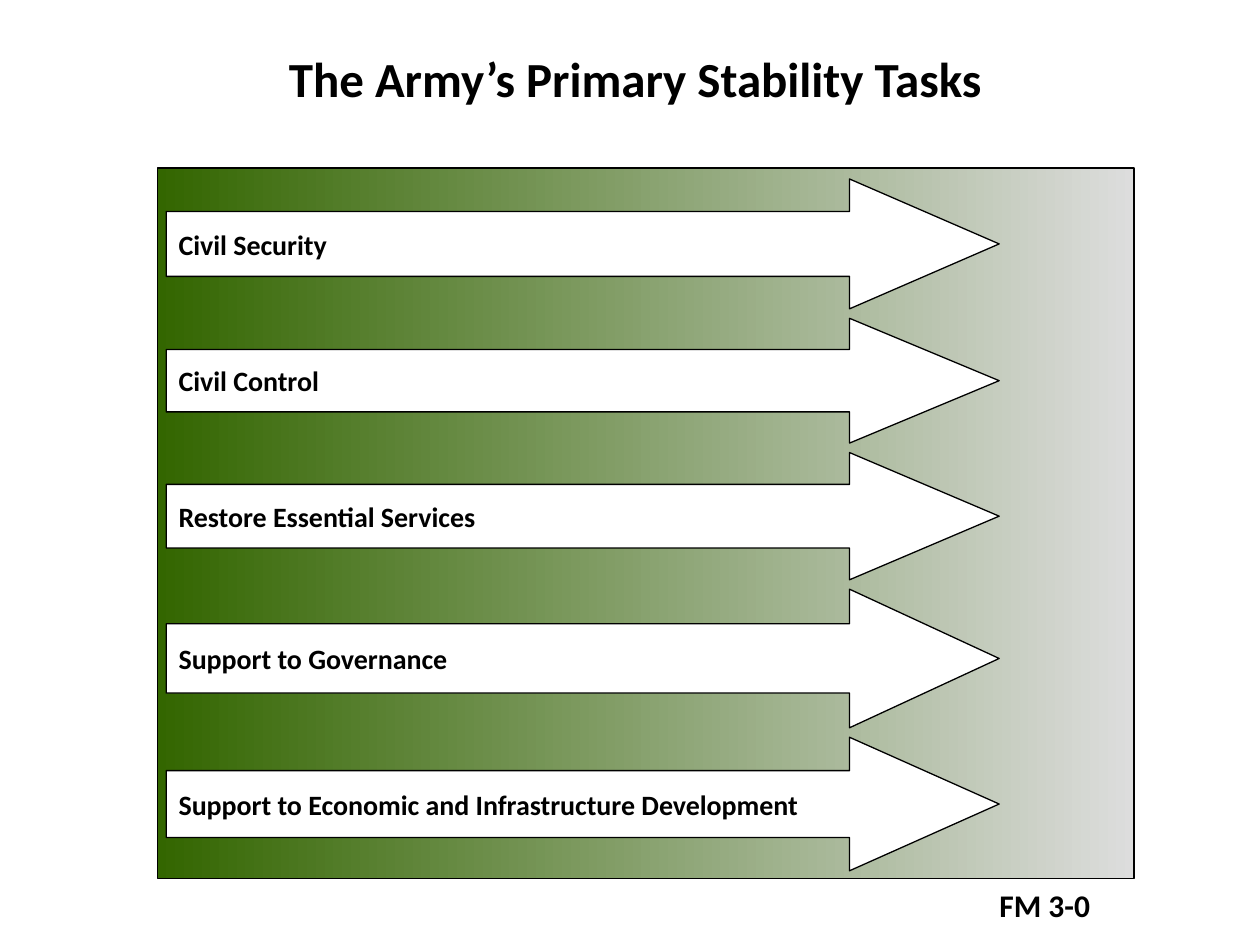
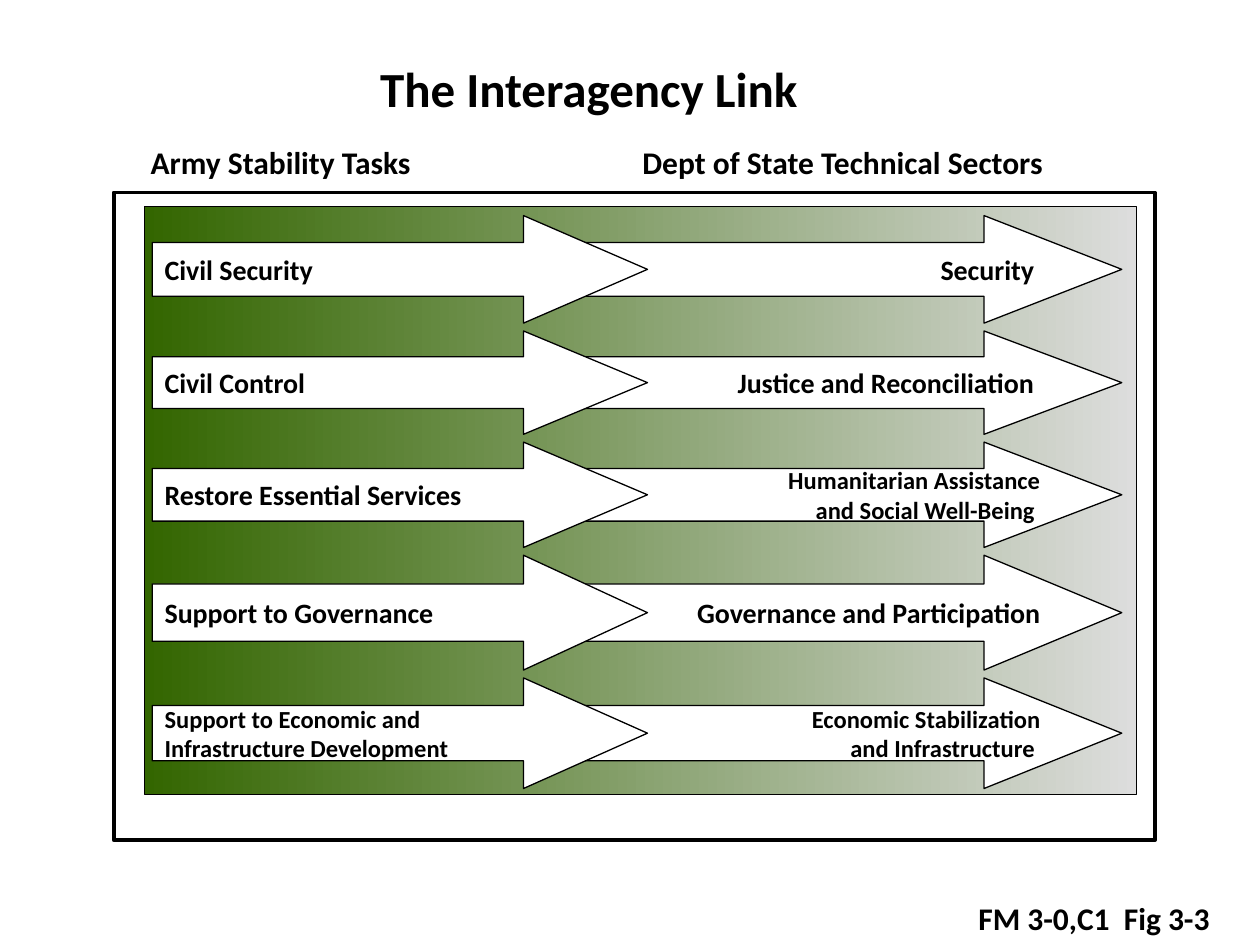
from pptx import Presentation
from pptx.dml.color import RGBColor
from pptx.enum.shapes import MSO_SHAPE
from pptx.enum.text import MSO_ANCHOR, MSO_AUTO_SIZE, PP_ALIGN
from pptx.util import Pt

RECTANGLE = MSO_SHAPE.RECTANGLE
RIGHT_ARROW = MSO_SHAPE.RIGHT_ARROW
TOP, MIDDLE = MSO_ANCHOR.TOP, MSO_ANCHOR.MIDDLE
LEFT, CENTER, RIGHT = PP_ALIGN.LEFT, PP_ALIGN.CENTER, PP_ALIGN.RIGHT
NO_AUTOFIT = MSO_AUTO_SIZE.NONE

BLACK, WHITE = "000000", "FFFFFF"
PANEL_GREEN, PANEL_GREY = "336600", "DDDDDD"
FONT = "Calibri"
TITLE_SIZE, CAPTION_SIZE, LABEL_SIZE, TWO_LINE_SIZE = 28, 18, 16, 14
TITLE_ONLY_LAYOUT = 5

# Arrow rows are laid out for the tall panel and scaled to any other.
FULL_PANEL_HEIGHT = 406
ROW_HEIGHTS = (74.2, 71.3, 72.7, 79.2, 76.3)
ROW_GAP, ROW_INSET = 5.4, 6.3

SHARED_TASKS = ["Civil Security", "Civil Control",
                "Restore Essential Services", "Support to Governance"]
ARMY_TASKS = SHARED_TASKS + ["Support to Economic and Infrastructure Development"]
ARMY_TASKS_NARROW = SHARED_TASKS + [
    "Support to Economic and\nInfrastructure Development"]
# The closing spaces set right-aligned lines off from the arrowhead.
STATE_SECTORS = ["Security ", "Justice and Reconciliation ",
                 "Humanitarian Assistance\nand Social Well-Being ",
                 "Governance and Participation",
                 "Economic Stabilization\nand Infrastructure "]


def color(hex_value):
    return RGBColor.from_string(hex_value)


def apply(target, values):
    for attribute, value in values.items():
        setattr(target, attribute, value)


def write(shape, text, size, align=LEFT, anchor=TOP, wrap=True):
    """Set the shape's text, one paragraph per line, in bold black."""
    frame = shape.text_frame
    frame.text = text
    apply(frame, {"auto_size": NO_AUTOFIT, "word_wrap": wrap,
                  "vertical_anchor": anchor})
    for paragraph in frame.paragraphs:
        paragraph.alignment = align
        apply(paragraph.font, {"name": FONT, "size": Pt(size), "bold": True})
        paragraph.font.color.rgb = color(BLACK)


def add_outlined(slide, preset, box, line_width=0.75):
    """Add a white preset shape with a black outline."""
    shape = slide.shapes.add_shape(preset, *map(Pt, box))
    shape.shadow.inherit = False
    shape.fill.solid()
    shape.fill.fore_color.rgb = color(WHITE)
    shape.line.color.rgb = color(BLACK)
    shape.line.width = Pt(line_width)
    return shape


def add_titled_slide(deck, title, box, align):
    slide = deck.slides.add_slide(deck.slide_layouts[TITLE_ONLY_LAYOUT])
    heading = slide.shapes.title
    apply(heading, dict(zip(("left", "top", "width", "height"), map(Pt, box))))
    write(heading, title, TITLE_SIZE, align)
    return slide


def add_caption(slide, text, left, top, width):
    caption = slide.shapes.add_textbox(Pt(left), Pt(top), Pt(width), Pt(29))
    write(caption, text, CAPTION_SIZE)


def add_gradient_panel(slide, box):
    panel = add_outlined(slide, RECTANGLE, box)
    panel.fill.gradient()
    panel.fill.gradient_angle = 0
    for stop, shade in zip(panel.fill.gradient_stops, (PANEL_GREEN, PANEL_GREY)):
        stop.color.rgb = color(shade)


def add_arrows(slide, labels, panel, left, width, head, align=LEFT):
    """Stack one labelled arrow per row; head is the length of the arrowhead."""
    panel_top, panel_height = panel[1], panel[3]
    scale = panel_height / FULL_PANEL_HEIGHT
    top = panel_top + ROW_INSET * scale
    for label, full_height in zip(labels, ROW_HEIGHTS):
        height = full_height * scale
        arrow = add_outlined(slide, RIGHT_ARROW, (left, top, width, height))
        arrow.adjustments[0] = 0.5
        arrow.adjustments[1] = head / height
        size = TWO_LINE_SIZE if "\n" in label else LABEL_SIZE
        write(arrow, label, size, align, MIDDLE, wrap=False)
        top += height + ROW_GAP * scale


def build_stability_tasks(deck):
    slide = add_titled_slide(deck, "The Army’s Primary Stability Tasks",
                             (36, 24, 654, 41), CENTER)
    add_caption(slide, "FM 3-0", 564, 502.5, 71)
    panel = (90, 96, 558, FULL_PANEL_HEIGHT)
    add_gradient_panel(slide, panel)
    add_arrows(slide, ARMY_TASKS, panel, left=95, width=476, head=85.5)


def build_interagency_link(deck):
    slide = add_titled_slide(deck, "The Interagency Link",
                             (210, 30, 335, 41), LEFT)
    add_caption(slide, "FM 3-0,C1  Fig 3-3", 552, 510, 166)
    add_outlined(slide, RECTANGLE, (65, 110, 595, 370), line_width=2.25)
    panel = (82.8, 118, 566.6, 336.2)
    add_gradient_panel(slide, panel)
    add_arrows(slide, STATE_SECTORS, panel, left=326, width=315, head=78.7,
               align=RIGHT)
    add_arrows(slide, ARMY_TASKS_NARROW, panel, left=87, width=283, head=70.8)
    add_caption(slide, "Army Stability Tasks", 79, 78, 209)
    add_caption(slide, "Dept of State Technical Sectors", 360, 78, 286)


def main():
    deck = Presentation()
    apply(deck, {"slide_width": Pt(720), "slide_height": Pt(540)})
    build_stability_tasks(deck)
    build_interagency_link(deck)
    deck.save("out.pptx")


if __name__ == "__main__":
    main()
